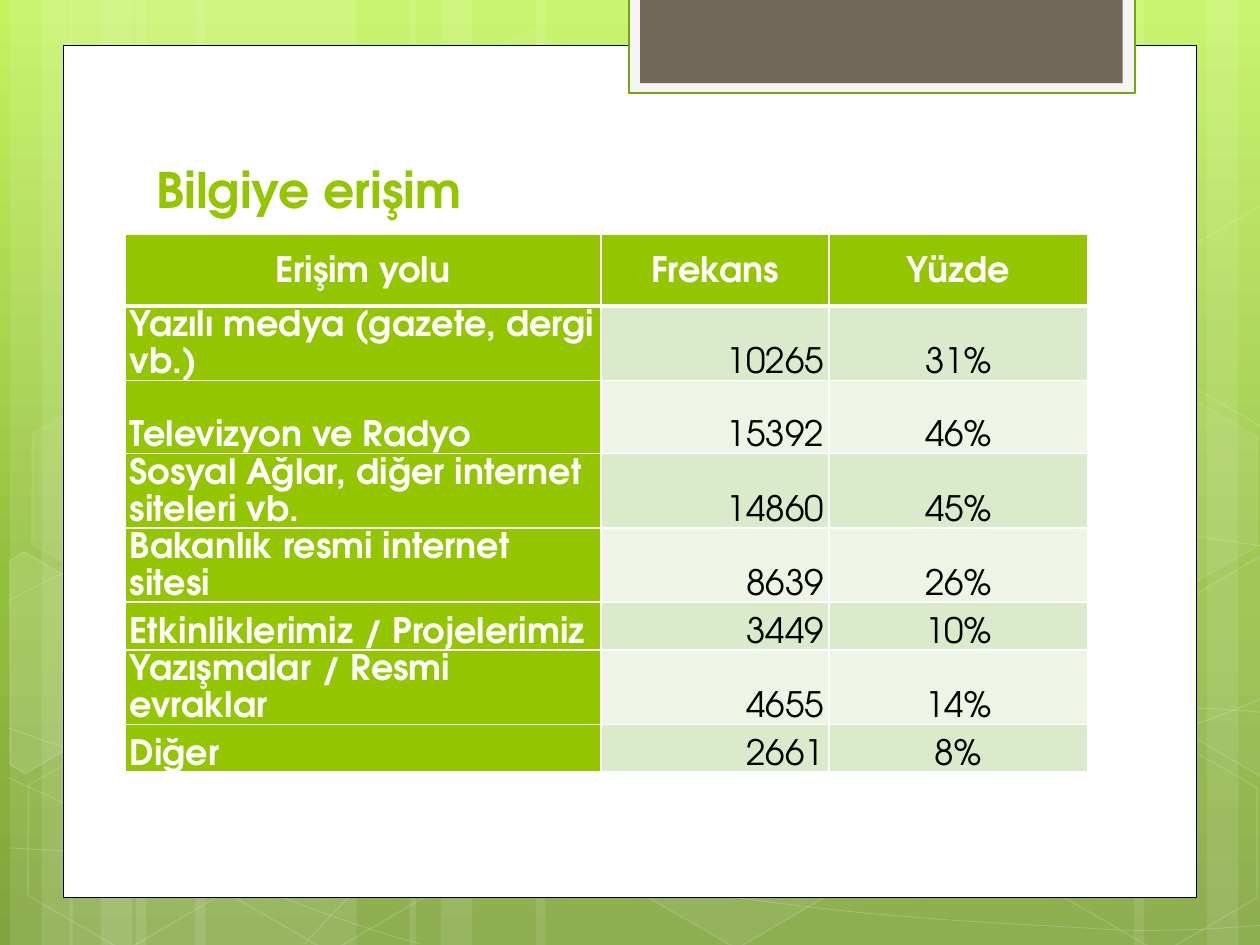
from copy import deepcopy
from dataclasses import dataclass

from lxml import etree
from pptx import Presentation, util as u
from pptx.dml.color import RGBColor
from pptx.enum import shapes, text
from pptx.oxml.ns import qn

Inches = u.Inches
Align = text.PP_ALIGN
Anchor = text.MSO_ANCHOR


@dataclass(frozen=True)
class Theme:
    font: str = "TeX Gyre Adventor"
    title_size: int = 28
    table_size: int = 20
    table_leading: float = 21.2
    white: str = "FFFFFF"
    black: str = "000000"
    green: str = "94C600"
    dark_green: str = "74A510"
    pale: str = "F5F5F5"
    brown: str = "71685A"
    stripes: tuple = ("DCEACC", "EEF5E7")
    gradient: tuple = ((0, "C3F35F"), (0.62, "93BF3F"), (1, "81A53E"))


T = Theme()
BANDS = [(1.08, 1.75), (0.08, 0.5), (0.33, 0.83), (1.55, 1.75), (0.55, 0.5), (0.8, 0.83),
         (7.33, 1.75), (9.58, 0.5), (9, 0.83), (4.25, 3.08), (3.25, 0.5), (3.5, 0.83)]
CURVES = [
    [(0.07, 6.73), (0.61, 6.76, 1.15, 6.79, 1.9, 6.78), (2.65, 6.77, 3.58, 6.75, 4.58, 6.65),
     (5.58, 6.55, 7, 6.36, 7.92, 6.17), (8.83, 5.98, 9.77, 5.68, 10.07, 5.51)],
    [(0.07, 4.77), (0.36, 4.61, 0.65, 4.46, 1.21, 4.31), (1.78, 4.16, 2.59, 3.94, 3.47, 3.87),
     (4.36, 3.8, 5.44, 3.79, 6.54, 3.87), (7.64, 3.95, 9.47, 4.26, 10.07, 4.34)],
    [(0.06, 6.17), (1.27, 6.72, 2.47, 7.27, 3.34, 7.49)],
    [(0.07, 5.78), (0.38, 5.89, 0.7, 6, 1.28, 6.16), (1.86, 6.31, 2.73, 6.56, 3.57, 6.73),
     (4.4, 6.9, 5.45, 7.08, 6.28, 7.18), (7.11, 7.29, 8, 7.33, 8.53, 7.36),
     (9.05, 7.4, 9.19, 7.38, 9.45, 7.38), (9.71, 7.37, 9.89, 7.35, 10.07, 7.34)],
    [(2.42, 7.49), (2.6, 7.29, 2.78, 7.09, 3.02, 6.91), (3.26, 6.73, 3.6, 6.53, 3.88, 6.39),
     (4.16, 6.25, 4.33, 6.19, 4.7, 6.09), (5.06, 5.99, 5.73, 5.85, 6.08, 5.78),
     (6.44, 5.71, 6.49, 5.71, 6.8, 5.69), (7.11, 5.66, 7.6, 5.63, 7.94, 5.62),
     (8.29, 5.61, 8.86, 5.62, 8.86, 5.62), (9.53, 5.62),
     (9.71, 5.63, 9.88, 5.64, 9.97, 5.65), (10.06, 5.66, 10.03, 5.65, 10.06, 5.66)],
]
HEXAGONS = [(3.34, 0.36, 4, 8), (4.97, 5.89, 6, 12), (0.11, 5.91, None, 12),
            (0.14, 3.12, 7, 8), (1.74, 5.92, None, 12), (7.53, 4.53, 10, 12),
            (8.34, 5.93, None, 12), (8.34, 3.14, 7, 8)]
CUT_HEXAGONS = [
    ([(0.08, 4.45), (0.19, 4.38), (0.96, 4.82), (0.95, 5.7), (0.2, 6.14), (0.08, 6.07)], 10),
    ([(9.26, 4.85), (10.01, 4.41), (10.09, 4.46), (10.09, 6.13), (10.02, 6.17), (9.26, 5.73)], 4),
    ([(9.26, 2.07), (10.01, 1.63), (10.1, 1.68), (10.09, 3.35), (10.02, 3.39), (9.26, 2.95)], None),
]
ROWS = [
    ("Erişim yolu", "Frekans", "Yüzde"),
    ("Yazılı medya (gazete, dergi vb.)", "10265", "31%"),
    ("Televizyon ve Radyo", "15392", "46%"),
    ("Sosyal Ağlar, diğer internet siteleri vb.", "14860", "45%"),
    ("Bakanlık resmi internet sitesi", "8639", "26%"),
    ("Etkinliklerimiz / Projelerimiz", "3449", "10%"),
    ("Yazışmalar / Resmi evraklar", "4655", "14%"),
    ("Diğer", "2661", "8%"),
]
COL_WIDTHS = (3.78, 1.81, 2.05)
ROW_HEIGHTS = (0.57, 0.58, 0.58, 0.59, 0.59, 0.38, 0.59, 0.38)


def set_attrs(obj, values):
    for name, value in values.items():
        setattr(obj, name, value)


def color(value):
    return RGBColor.from_string(value)


def paint(fill, parent, value, alpha):
    if value is None or alpha is None:
        fill.background()
        return
    fill.solid()
    fill.fore_color.rgb = color(value)
    if alpha < 100:
        clr = parent.find(f"{qn('a:solidFill')}/{qn('a:srgbClr')}")
        etree.SubElement(clr, qn("a:alpha"), val=str(alpha * 1000))


def style(sp, fill=None, alpha=100, line=None, width=1, line_alpha=100):
    sp.shadow.inherit = False
    props = sp.element.spPr
    paint(sp.fill, props, fill, alpha)
    sp.line.width = u.Pt(width)
    paint(sp.line.fill, props.find(qn("a:ln")), line, line_alpha)


def add_preset(s, kind, box, **look):
    sp = s.shapes.add_shape(kind, *map(Inches, box))
    style(sp, **look)
    return sp


def add_outline(s, points, close, **look):
    pts = [(Inches(x), Inches(y)) for x, y in points]
    builder = s.shapes.build_freeform(*pts[0])
    builder.add_line_segments(pts[1:], close=close)
    sp = builder.convert_to_shape()
    style(sp, **look)
    return sp


def add_curve(s, curve, **look):
    sp = add_outline(s, [seg[-2:] for seg in curve], False, **look)
    for ln, seg in zip(list(sp.element.iter(qn("a:lnTo"))), curve[1:]):
        if len(seg) == 6:
            bend = etree.Element(qn("a:cubicBezTo"))
            for x, y in zip(seg[::2], seg[1::2]):
                etree.SubElement(bend, qn("a:pt"), x=str(Inches(x) - sp.left),
                                 y=str(Inches(y) - sp.top))
            ln.getparent().replace(ln, bend)


def add_background(s):
    fill = s.background.fill
    fill.gradient()
    fill.gradient_angle = 270
    stops = s.element.find(f".//{qn('a:gsLst')}")
    stops.insert(1, deepcopy(stops[0]))
    for stop, (position, value) in zip(fill.gradient_stops, T.gradient):
        stop.position = position
        stop.color.rgb = color(value)


def add_decor(s):
    rect, hexagon = shapes.MSO_SHAPE.RECTANGLE, shapes.MSO_SHAPE.HEXAGON
    for x, width in BANDS:
        add_preset(s, rect, (x, 0, width, 7.5), fill=T.white, alpha=10)
    for curve in CURVES:
        add_curve(s, curve, line=T.white, width=0.5, line_alpha=20)
    for x, y, alpha, line_alpha in HEXAGONS:
        sp = add_preset(s, hexagon, (x, y, 1.75, 1.52), fill=T.white, alpha=alpha,
                        line=T.white, line_alpha=line_alpha)
        sp.rotation = 30
        sp.adjustments[0], sp.adjustments[1] = 0.285, 1.155
    for points, alpha in CUT_HEXAGONS:
        add_outline(s, points, True, fill=T.white, alpha=alpha, line=T.white, line_alpha=12)
    add_preset(s, rect, (0.5, 0.36, 9, 6.76), fill=T.white, line=T.black, width=0.5)
    add_preset(s, rect, (4.99, -0.02, 4.02, 0.76), fill=T.pale, line=T.dark_green, width=1.25)
    add_preset(s, rect, (5.08, -0.02, 3.83, 0.68), fill=T.brown)


def write(tf, words, size, value, bold, **layout):
    p = tf.paragraphs[0]
    set_attrs(p, layout)
    r = p.add_run()
    r.text = words
    set_attrs(r.font, {"name": T.font, "size": u.Pt(size), "bold": bold})
    r.font.color.rgb = color(value)


def add_title(s, words):
    tf = s.shapes.add_textbox(*map(Inches, (1.14, 1.12, 7.68, 0.66))).text_frame
    set_attrs(tf, {"word_wrap": True, "vertical_anchor": Anchor.BOTTOM})
    write(tf, words, T.title_size, T.green, True)


def add_borders(cell, widths):
    props = cell._tc.get_or_add_tcPr()
    for side, width in widths.items():
        ln = etree.SubElement(props, qn(f"a:ln{side}"), w=str(u.Pt(width)))
        fill = etree.SubElement(ln, qn("a:solidFill"))
        etree.SubElement(fill, qn("a:srgbClr"), val=T.white)


def fill_cell(cell, words, row, col):
    strong = row == 0 or col == 0
    align = Align.CENTER if row == 0 else (Align.LEFT, Align.RIGHT, Align.CENTER)[col]
    add_borders(cell, {"L": 1, "R": 1, "T": 3 if row == 1 else 1, "B": 3 if row == 0 else 1})
    cell.fill.solid()
    cell.fill.fore_color.rgb = color(T.green if strong else T.stripes[(row - 1) % 2])
    set_attrs(cell, {"margin_left": Inches(0.04), "margin_right": Inches(0.04),
                     "margin_top": 0, "margin_bottom": 0,
                     "vertical_anchor": Anchor.MIDDLE if row == 0 else Anchor.BOTTOM})
    write(cell.text_frame, words, T.table_size, T.white if strong else T.black, strong,
          alignment=align, line_spacing=u.Pt(T.table_leading))


def add_access_table(s):
    box = map(Inches, (0.99, 1.86, sum(COL_WIDTHS), sum(ROW_HEIGHTS)))
    table = s.shapes.add_table(len(ROWS), len(COL_WIDTHS), *box).table
    for column, width in zip(table.columns, COL_WIDTHS):
        column.width = Inches(width)
    for i, (words, height) in enumerate(zip(ROWS, ROW_HEIGHTS)):
        table.rows[i].height = Inches(height)
        for j, word in enumerate(words):
            fill_cell(table.cell(i, j), word, i, j)


def main():
    prs = Presentation()
    set_attrs(prs, {"slide_width": Inches(10), "slide_height": Inches(7.5)})
    s = prs.slides.add_slide(prs.slide_layouts[6])
    add_background(s)
    add_decor(s)
    add_title(s, "Bilgiye erişim")
    add_access_table(s)
    prs.save("out.pptx")


if __name__ == "__main__":
    main()
